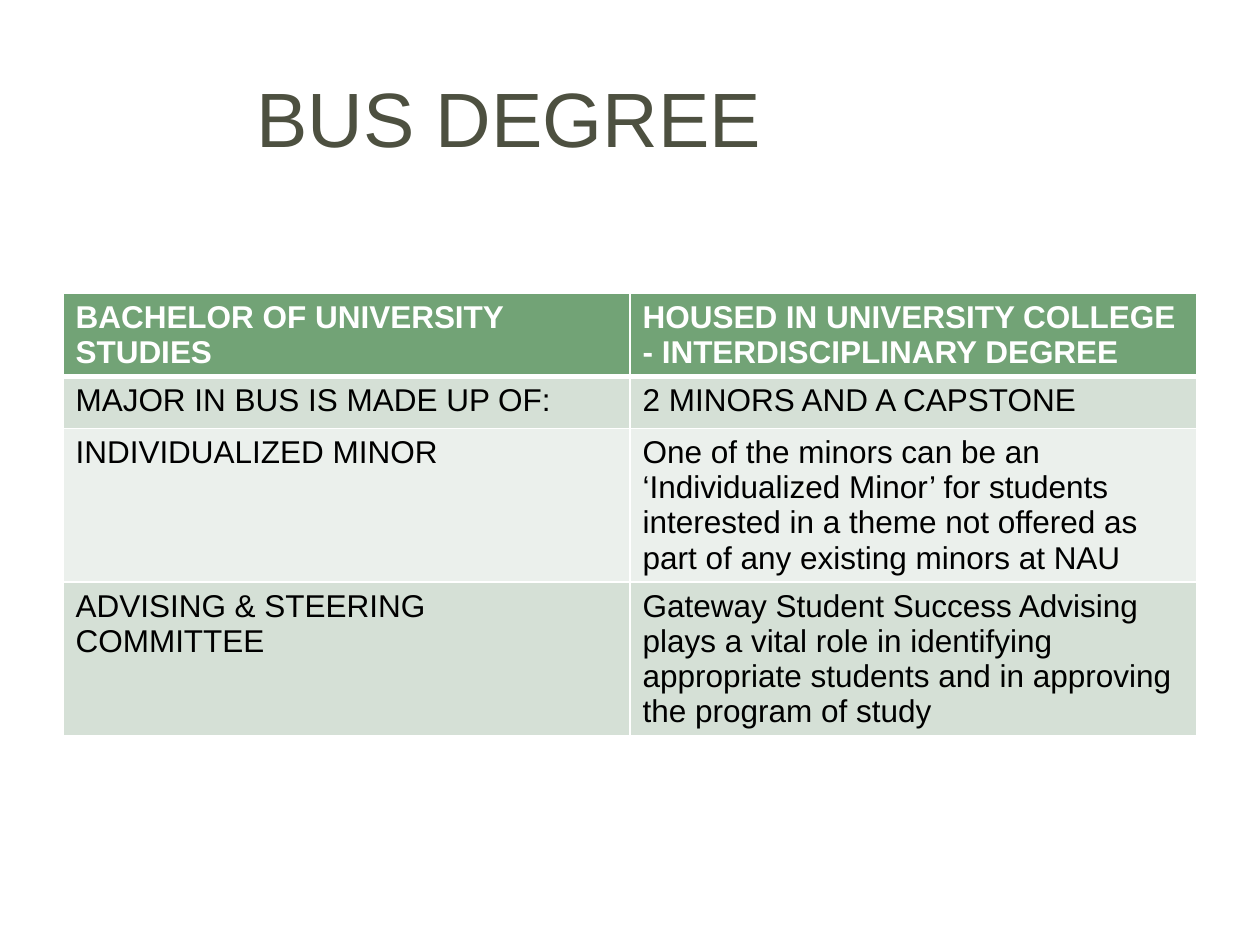
from lxml.etree import SubElement
from pptx import Presentation
from pptx.dml.color import RGBColor
from pptx.enum.text import MSO_ANCHOR, PP_ALIGN
from pptx.oxml.ns import qn
from pptx.util import Inches, Pt

TITLE = "BUS DEGREE"
ROWS = [
    ("BACHELOR OF UNIVERSITY STUDIES",
     "HOUSED IN UNIVERSITY COLLEGE\n- INTERDISCIPLINARY DEGREE"),
    ("MAJOR IN BUS IS MADE UP OF:", "2 MINORS AND A CAPSTONE"),
    ("INDIVIDUALIZED MINOR",
     "One of the minors can be an ‘Individualized Minor’ for students interested "
     "in a theme not offered as part of any existing minors at NAU"),
    ("ADVISING & STEERING COMMITTEE",
     "Gateway Student Success Advising plays a vital role in identifying "
     "appropriate students and in approving the program of study"),
]
ROW_HEIGHTS = [0.65, 0.41, 1.22, 1.22]
COLUMN_WIDTH = 4.5
COLORS = {
    "title": "4D5040",
    "header": "72A376",
    "band_dark": "D5E0D6",
    "band_light": "EBF0EC",
    "white": "FFFFFF",
    "black": "000000",
}


def write_text(frame, text, size=18, color="black", bold=False, align=PP_ALIGN.LEFT):
    """Fill a text frame with one formatted paragraph per line of text."""
    frame.text = text
    for para in frame.paragraphs:
        para.alignment = align
        for span in para.runs:
            span.font.name = "Arial"
            span.font.size = Pt(size)
            span.font.bold = bold
            span.font.color.rgb = RGBColor.from_string(COLORS[color])


def set_borders(cell, bottom=1, top=1):
    """Draw white lines on the four sides of a cell."""
    properties = cell._tc.get_or_add_tcPr()
    sides = {"a:lnL": 1, "a:lnR": 1, "a:lnT": top, "a:lnB": bottom}
    for index, (tag, width) in enumerate(sides.items()):
        line = SubElement(properties, qn(tag), w=str(Pt(width)))
        fill = SubElement(line, qn("a:solidFill"))
        SubElement(fill, qn("a:srgbClr"), val=COLORS["white"])
        properties.insert(index, line)


def add_title(page):
    """Place the slide title."""
    title = page.shapes.title
    title.left, title.top = Inches(0.5), Inches(0.3)
    title.width, title.height = Inches(7.08), Inches(1.25)
    title.text_frame.vertical_anchor = MSO_ANCHOR.MIDDLE
    write_text(title.text_frame, TITLE, size=44, color="title", align=PP_ALIGN.CENTER)


def add_degree_table(page):
    """Build the table with a header row and banded body rows."""
    columns = len(ROWS[0])
    table = page.shapes.add_table(
        len(ROWS), columns, Inches(0.5), Inches(2.33),
        Inches(COLUMN_WIDTH * columns), Inches(sum(ROW_HEIGHTS))).table
    for column in table.columns:
        column.width = Inches(COLUMN_WIDTH)
    for r, (texts, height) in enumerate(zip(ROWS, ROW_HEIGHTS)):
        table.rows[r].height = Inches(height)
        header = r == 0
        band = "header" if header else "band_dark" if r % 2 else "band_light"
        for c, text in enumerate(texts):
            cell = table.cell(r, c)
            cell.fill.solid()
            cell.fill.fore_color.rgb = RGBColor.from_string(COLORS[band])
            set_borders(cell, bottom=3 if header else 1, top=3 if r == 1 else 1)
            write_text(cell.text_frame, text, bold=header,
                       color="white" if header else "black")


def main():
    """Build and save the deck."""
    deck = Presentation()
    deck.slide_width, deck.slide_height = Inches(10), Inches(7.5)
    page = deck.slides.add_slide(deck.slide_layouts[5])
    add_title(page)
    add_degree_table(page)
    deck.save("out.pptx")


if __name__ == "__main__":
    main()
